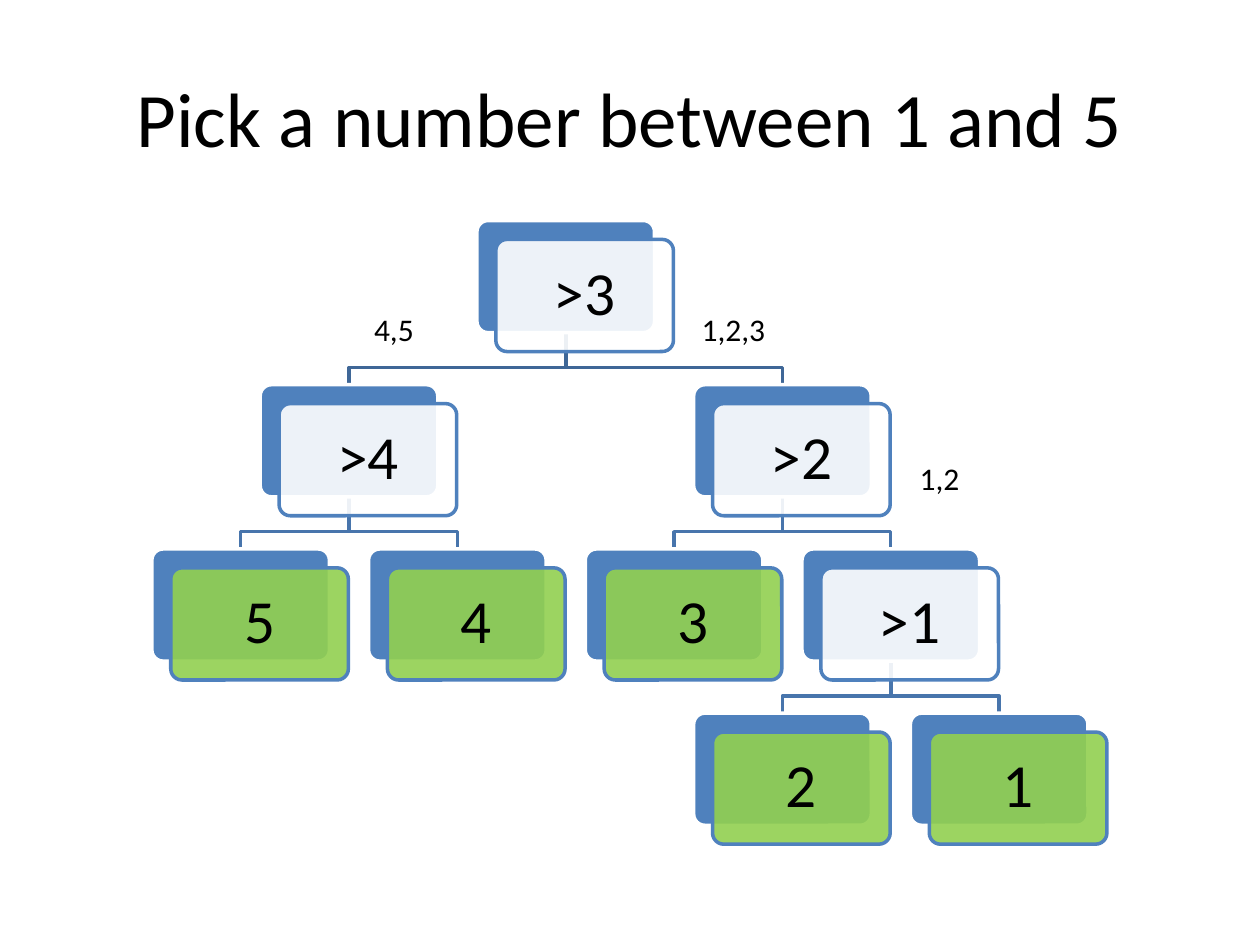
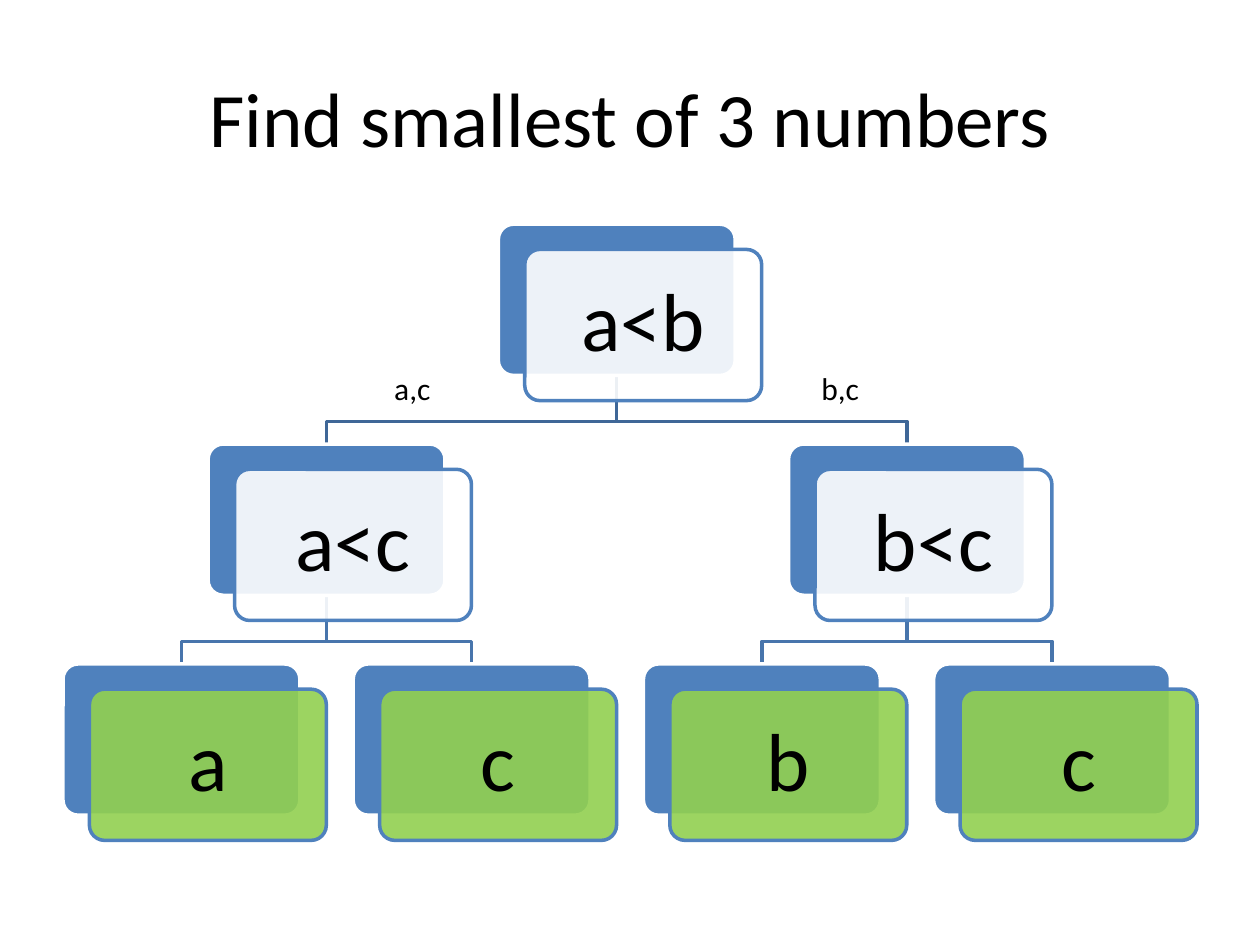
from collections.abc import Iterator
from dataclasses import dataclass

from lxml.etree import SubElement
from pptx import Presentation
from pptx.dml.color import RGBColor
from pptx.enum.shapes import MSO_SHAPE
from pptx.enum.text import MSO_ANCHOR, MSO_AUTO_SIZE, PP_ALIGN
from pptx.oxml.ns import qn
from pptx.presentation import Presentation as PresentationType
from pptx.shapes.autoshape import Shape
from pptx.shapes.shapetree import GroupShapes
from pptx.slide import Slide
from pptx.text.text import TextFrame
from pptx.util import Inches, Pt


@dataclass(frozen=True)
class Theme:
    font: str = "Calibri"
    text: RGBColor = RGBColor(0x00, 0x00, 0x00)
    background: RGBColor = RGBColor(0xFF, 0xFF, 0xFF)
    box: RGBColor = RGBColor(0x4F, 0x81, 0xBD)
    question: RGBColor = RGBColor(0xFF, 0xFF, 0xFF)
    answer: RGBColor = RGBColor(0x92, 0xD0, 0x50)
    root_branch: RGBColor = RGBColor(0x3F, 0x67, 0x97)
    branch: RGBColor = RGBColor(0x48, 0x75, 0xAC)
    title_size: int = 44
    label_size: int = 18
    line_width: int = 2
    card_opacity: int = 90
    corner: float = 0.1
    bend: float = 0.67


THEME = Theme()


@dataclass(frozen=True)
class Node:
    text: str
    column: int
    children: tuple["Node", ...] = ()


@dataclass(frozen=True)
class BranchLabel:
    text: str
    left: float
    top: float
    width: float


@dataclass(frozen=True)
class Layout:
    first_center: float
    last_center: float
    columns: int
    first_top: float
    last_top: float
    rows: int
    box_width: float
    box_height: float
    card_shift_x: float
    card_shift_y: float
    inset: float
    text_size: int

    def center(self, column: int) -> float:
        step = (self.last_center - self.first_center) / (self.columns - 1)
        return self.first_center + column * step

    def top(self, row: int) -> float:
        step = (self.last_top - self.first_top) / (self.rows - 1)
        return self.first_top + row * step


@dataclass(frozen=True)
class TreeSlide:
    title: str
    root: Node
    layout: Layout
    labels: tuple[BranchLabel, ...]


TREE_SLIDES = (
    TreeSlide(
        "Pick a number between 1 and 5",
        Node(">3", 3, (
            Node(">4", 1, (Node("5", 0), Node("4", 2))),
            Node(">2", 5, (
                Node("3", 4),
                Node(">1", 6, (Node("2", 5), Node("1", 7))),
            )),
        )),
        Layout(1.91, 7.93, 8, 1.75, 5.66, 4, 1.41, 0.89, 0.15, 0.15, 0.15, 35),
        (
            BranchLabel("4,5", 2.87, 2.41, 0.79),
            BranchLabel("1,2,3", 5.47, 2.41, 0.87),
            BranchLabel("1,2", 7.2, 3.59, 0.79),
        ),
    ),
    TreeSlide(
        "Find smallest of 3 numbers",
        Node("a<b", 3, (
            Node("a<c", 1, (Node("a", 0), Node("c", 2))),
            Node("b<c", 5, (Node("b", 4), Node("c", 6))),
        )),
        Layout(1.44, 8.35, 7, 1.78, 5.27, 3, 1.88, 1.2, 0.21, 0.2, 0.2, 47),
        (
            BranchLabel("a,c", 3.03, 2.88, 0.79),
            BranchLabel("b,c", 6.42, 2.88, 0.87),
        ),
    ),
)


def walk(node: Node, row: int = 0) -> Iterator[tuple[Node, int]]:
    yield node, row
    for child in node.children:
        yield from walk(child, row + 1)


def write(text_frame: TextFrame, text: str, size: int, alignment: PP_ALIGN) -> None:
    text_frame.text = text
    paragraph = text_frame.paragraphs[0]
    paragraph.alignment = alignment
    paragraph.font.name = THEME.font
    paragraph.font.size = Pt(size)
    paragraph.font.color.rgb = THEME.text


def style_line(shape: Shape, color: RGBColor) -> None:
    shape.shadow.inherit = False
    shape.line.color.rgb = color
    shape.line.width = Pt(THEME.line_width)


def set_opacity(shape: Shape, percent: int) -> None:
    color = shape.element.spPr.find(qn("a:solidFill")).find(qn("a:srgbClr"))
    SubElement(color, qn("a:alpha")).set("val", str(percent * 1000))


def draw_branch(shapes: GroupShapes, layout: Layout, parent: Node, child: Node, row: int) -> None:
    start_x, end_x = layout.center(parent.column), layout.center(child.column)
    start_y, end_y = layout.top(row) + layout.box_height, layout.top(row + 1)
    bend_y = start_y + (end_y - start_y) * THEME.bend
    corners = [(start_x, bend_y), (end_x, bend_y), (end_x, end_y)]
    builder = shapes.build_freeform(Inches(start_x), Inches(start_y))
    builder.add_line_segments([(Inches(x), Inches(y)) for x, y in corners], close=False)
    branch = builder.convert_to_shape()
    branch.fill.background()
    style_line(branch, THEME.branch if row else THEME.root_branch)


def draw_box(shapes: GroupShapes, layout: Layout, left: float, top: float,
             fill: RGBColor, line: RGBColor) -> Shape:
    box = shapes.add_shape(
        MSO_SHAPE.ROUNDED_RECTANGLE, Inches(left), Inches(top),
        Inches(layout.box_width), Inches(layout.box_height),
    )
    box.adjustments[0] = THEME.corner
    box.fill.solid()
    box.fill.fore_color.rgb = fill
    style_line(box, line)
    return box


def draw_node(shapes: GroupShapes, layout: Layout, node: Node, row: int) -> None:
    left = layout.center(node.column) - layout.box_width / 2
    top = layout.top(row)
    draw_box(shapes, layout, left, top, THEME.box, THEME.background)
    card = draw_box(
        shapes, layout, left + layout.card_shift_x, top + layout.card_shift_y,
        THEME.question if node.children else THEME.answer, THEME.box,
    )
    set_opacity(card, THEME.card_opacity)
    text_frame = card.text_frame
    text_frame.word_wrap = True
    text_frame.vertical_anchor = MSO_ANCHOR.MIDDLE
    text_frame.margin_left = text_frame.margin_right = Inches(layout.inset)
    text_frame.margin_top = text_frame.margin_bottom = Inches(layout.inset)
    write(text_frame, node.text, layout.text_size, PP_ALIGN.CENTER)
    text_frame.paragraphs[0].line_spacing = 0.9


def draw_label(slide: Slide, label: BranchLabel) -> None:
    text_box = slide.shapes.add_textbox(
        Inches(label.left), Inches(label.top), Inches(label.width), Inches(0.4)
    )
    text_box.text_frame.word_wrap = True
    text_box.text_frame.auto_size = MSO_AUTO_SIZE.SHAPE_TO_FIT_TEXT
    write(text_box.text_frame, label.text, THEME.label_size, PP_ALIGN.LEFT)


def draw_title(slide: Slide, text: str) -> None:
    title = slide.shapes.title
    title.left, title.top = Inches(0.5), Inches(0.3)
    title.width, title.height = Inches(9), Inches(1.25)
    title.text_frame.vertical_anchor = MSO_ANCHOR.MIDDLE
    write(title.text_frame, text, THEME.title_size, PP_ALIGN.CENTER)


def add_tree_slide(presentation: PresentationType, content: TreeSlide) -> None:
    slide = presentation.slides.add_slide(presentation.slide_layouts.get_by_name("Title Only"))
    draw_title(slide, content.title)
    tree_shapes = slide.shapes.add_group_shape().shapes
    for node, row in walk(content.root):
        for child in node.children:
            draw_branch(tree_shapes, content.layout, node, child, row)
    for node, row in walk(content.root):
        draw_node(tree_shapes, content.layout, node, row)
    for label in content.labels:
        draw_label(slide, label)


def main() -> None:
    presentation = Presentation()
    presentation.slide_width = Inches(10)
    presentation.slide_height = Inches(7.5)
    for content in TREE_SLIDES:
        add_tree_slide(presentation, content)
    presentation.save("out.pptx")


if __name__ == "__main__":
    main()
